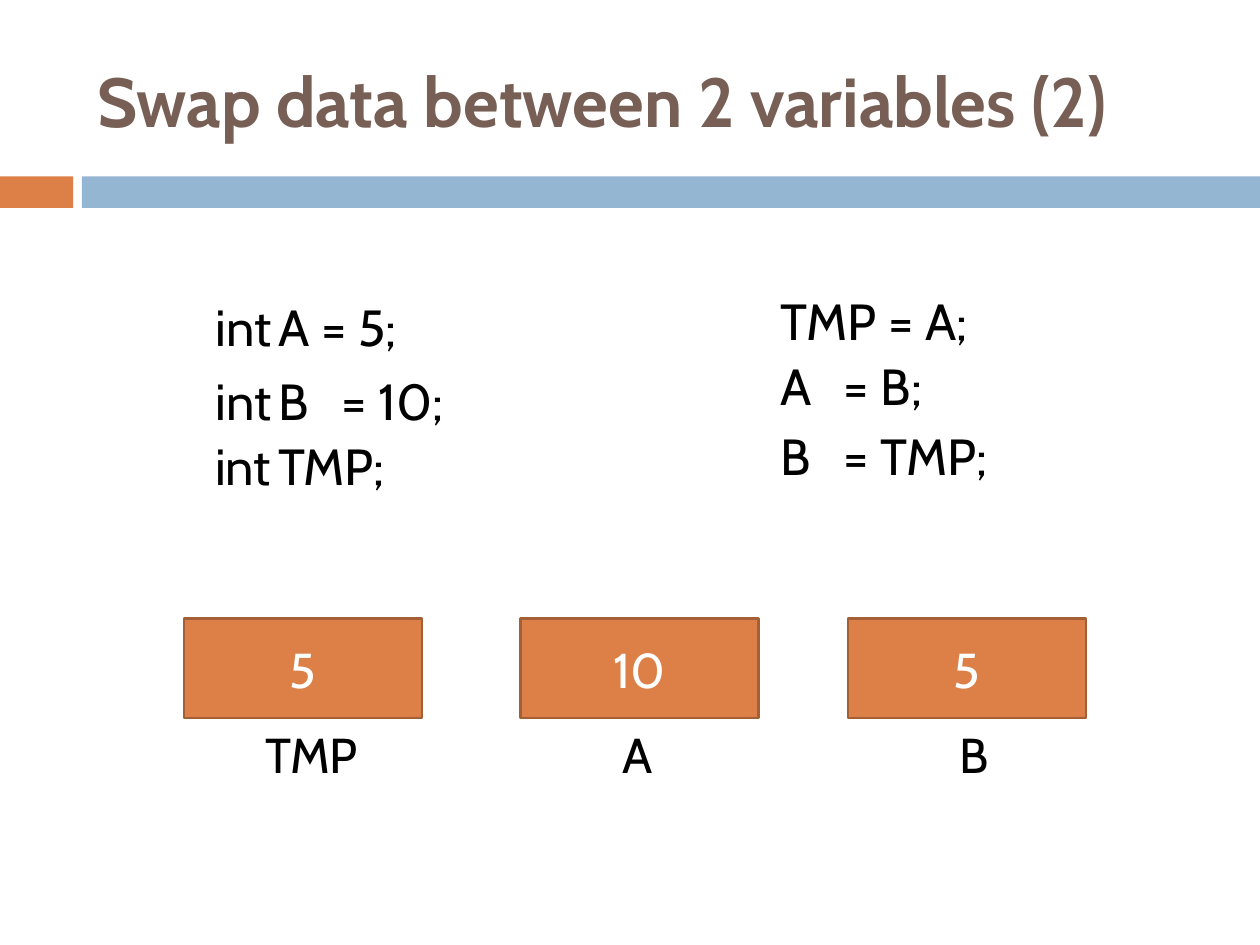
import pptx
import pptx.dml.color
import pptx.enum.shapes
import pptx.enum.text
import pptx.oxml.ns
import pptx.util
import lxml.etree

Inches = pptx.util.Inches
Pt = pptx.util.Pt
Color = pptx.dml.color.RGBColor
Align = pptx.enum.text.PP_ALIGN
Anchor = pptx.enum.text.MSO_ANCHOR

ORANGE = Color(0xDD, 0x80, 0x47)
RUST = Color(0xA3, 0x5F, 0x35)
BLUE = Color(0x94, 0xB6, 0xD2)
BROWN = Color(0x77, 0x5F, 0x55)
BLACK = Color(0, 0, 0)
WHITE = Color(0xFF, 0xFF, 0xFF)
FONT = "Cabin"


def style(para, size, color, align=Align.LEFT, bold=False):
    """Set the font and alignment of a paragraph."""
    para.alignment = align
    para.font.name = FONT
    para.font.size = Pt(size)
    para.font.bold = bold
    para.font.color.rgb = color


def place(shape, left, top, width, height):
    """Move a shape to the given box."""
    shape.left, shape.top = left, top
    shape.width, shape.height = width, height


def add_rect(slide, left, top, width, height, color):
    """Add a plain filled rectangle and return it."""
    rect = slide.shapes.add_shape(
        pptx.enum.shapes.MSO_SHAPE.RECTANGLE, left, top, width, height)
    rect.shadow.inherit = False
    rect.fill.solid()
    rect.fill.fore_color.rgb = color
    rect.line.fill.background()
    return rect


def add_text(slide, left, top, width, height):
    """Add an empty wrapping text box and return its frame."""
    frame = slide.shapes.add_textbox(left, top, width, height).text_frame
    frame.word_wrap = True
    return frame


def add_band(slide, left, top, width, height):
    """Draw the two-part band below the title."""
    short, gap = Inches(0.58), Inches(0.07)
    add_rect(slide, left, top, short, height, ORANGE)
    add_rect(slide, left + short + gap, top, width - short - gap, height, BLUE)


def add_title(slide, left, top, width, height, text):
    """Fill and place the title."""
    title = slide.shapes.title
    place(title, left, top, width, height)
    frame = title.text_frame
    frame.text = text
    frame.auto_size = pptx.enum.text.MSO_AUTO_SIZE.NONE
    frame.vertical_anchor = Anchor.MIDDLE
    style(frame.paragraphs[0], 39.6, BROWN, bold=True)


def fill_code(frame, lines, tabs):
    """Write code lines without bullets, with tab stops for columns."""
    frame.text = "\n".join(lines)
    frame.auto_size = pptx.enum.text.MSO_AUTO_SIZE.NONE
    qn = pptx.oxml.ns.qn
    for para in frame.paragraphs:
        props = para._p.get_or_add_pPr()
        props.set("marL", "0")
        props.set("indent", "0")
        lxml.etree.SubElement(props, qn("a:buNone"))
        stops = lxml.etree.SubElement(props, qn("a:tabLst"))
        for tab in tabs:
            lxml.etree.SubElement(
                stops, qn("a:tab"), pos=str(Inches(tab)), algn="l")
        para.space_before = Pt(7)
        style(para, 29, BLACK)


def add_vars(slide, left, top, width):
    """Place the list of variables and the added third one."""
    tabs = (0.63, 1.05)
    body = slide.placeholders[1]
    place(body, left, top, width, Inches(1.29))
    fill_code(body.text_frame, ["int\tA = 5;", "int\tB\t= 10;"], tabs)
    frame = add_text(slide, left, top + Inches(1.1), width, Inches(0.74))
    fill_code(frame, ["int\tTMP;"], tabs)


def add_steps(slide, left, top, width):
    """Place the three steps of the swap."""
    steps = (("TMP = A;", 0), ("A\t= B;", 0.52), ("B\t= TMP;", 1.07))
    for text, drop in steps:
        frame = add_text(slide, left, top + Inches(drop), width, Inches(0.74))
        fill_code(frame, [text], (0.7,))


def add_cell(slide, left, top, width, height, value, name, shift, span):
    """Draw a memory cell with its value and the name below it."""
    cell = add_rect(slide, left, top, width, height, ORANGE)
    cell.line.color.rgb = RUST
    cell.line.width = Pt(1.5)
    cell.text_frame.text = value
    cell.text_frame.vertical_anchor = Anchor.MIDDLE
    style(cell.text_frame.paragraphs[0], 28, WHITE, Align.CENTER)
    frame = add_text(slide, left + Inches(shift), top + height,
                     Inches(span), Inches(0.57))
    frame.text = name
    style(frame.paragraphs[0], 28, BLACK)


def main():
    """Build the slide and save it."""
    deck = pptx.Presentation()
    deck.slide_width, deck.slide_height = Inches(10), Inches(7.5)
    slide = deck.slides.add_slide(deck.slide_layouts[1])
    add_band(slide, 0, Inches(1.4), deck.slide_width, Inches(0.25))
    add_title(slide, Inches(0.67), Inches(0.25), Inches(8.92), Inches(1.08),
              "Swap data between 2 variables (2)")
    add_vars(slide, Inches(1.61), Inches(2.3), Inches(2.36))
    add_steps(slide, Inches(6.1), Inches(2.25), Inches(2.36))
    cells = ((1.46, "5", "TMP", 0.55, 1.1),
             (4.13, "10", "A", 0.71, 0.55),
             (6.73, "5", "B", 0.79, 0.55))
    for left, value, name, shift, span in cells:
        add_cell(slide, Inches(left), Inches(4.91), Inches(1.89),
                 Inches(0.79), value, name, shift, span)
    deck.save("out.pptx")


if __name__ == "__main__":
    main()
